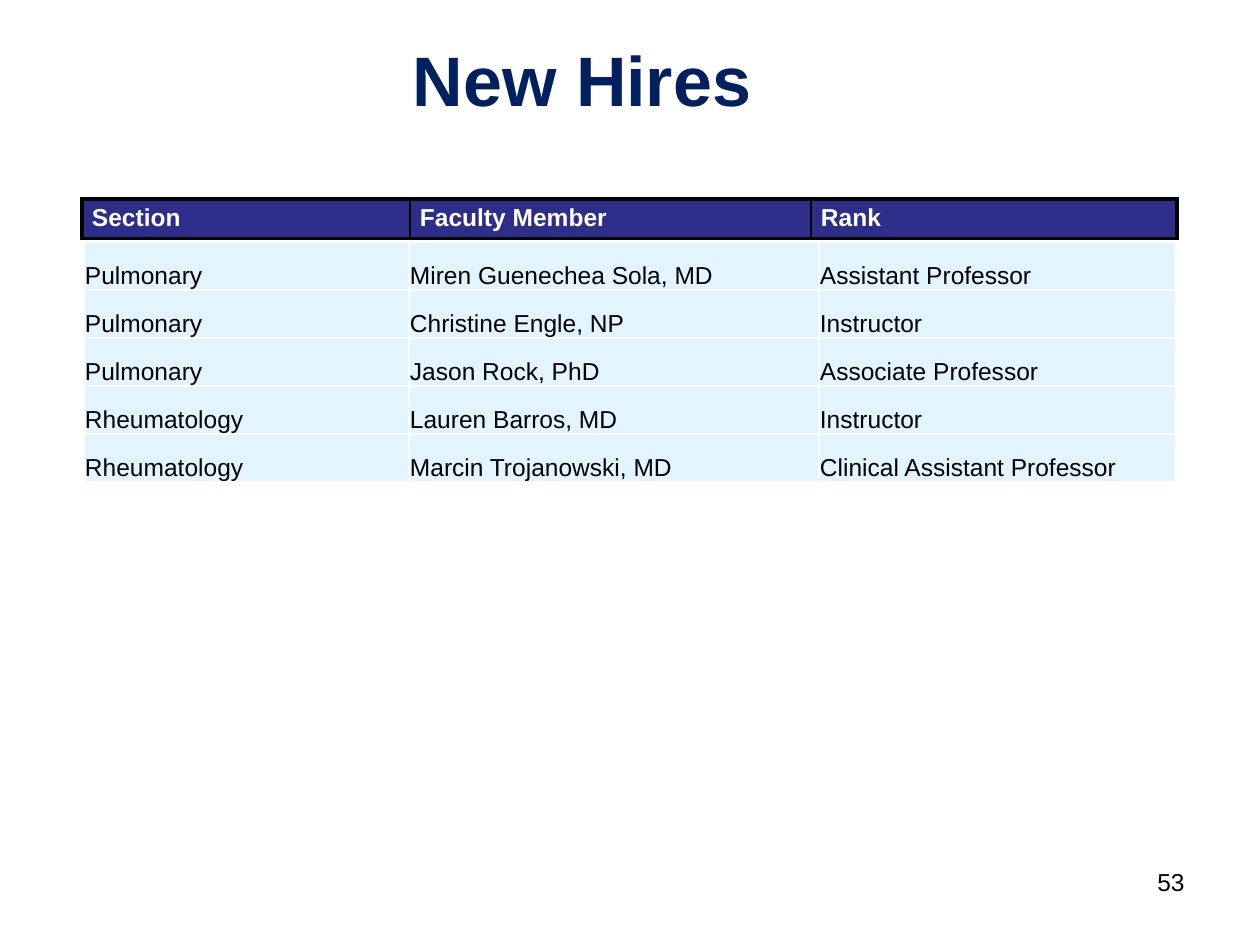
from dataclasses import dataclass
from lxml.etree import SubElement as Sub
from pptx import Presentation as Deck
from pptx.dml.color import RGBColor as Rgb
from pptx.enum.text import MSO_ANCHOR as Anchor, PP_ALIGN as Align
from pptx.oxml.ns import qn
from pptx.util import Emu, Pt

SCALE = 914400 / 126


def px(n):
    return Emu(round(n * SCALE))


@dataclass(frozen=True)
class Theme:
    font: str = "Arial"
    navy: str = "002060"
    head: str = "2D2D8A"
    pale: str = "E1F4FF"
    white: str = "FFFFFF"
    black: str = "000000"
    big: int = 40
    small: int = 14
    thin: float = 1
    thick: float = 2.25


class Page:
    def __init__(self, deck, theme):
        self.theme = theme
        self.slide = deck.slides.add_slide(deck.slide_layouts[6])

    def run(self, frame, text, size, color, bold=False, align=Align.LEFT):
        para = frame.paragraphs[0]
        para.alignment = align
        run = para.add_run()
        run.text = text
        run.font.name = self.theme.font
        run.font.size = Pt(size)
        run.font.bold = bold
        run.font.color.rgb = Rgb.from_string(color)

    def text(self, box, text, size, color, bold=False,
             align=Align.LEFT, anchor=Anchor.TOP):
        frame = self.slide.shapes.add_textbox(*map(px, box)).text_frame
        frame.word_wrap = True
        frame.vertical_anchor = anchor
        self.run(frame, text, size, color, bold, align)

    def edge(self, cell, side, color, width):
        line = Sub(cell._tc.get_or_add_tcPr(), qn("a:ln" + side), w=str(Pt(width)))
        fill = Sub(line, qn("a:solidFill"))
        Sub(fill, qn("a:srgbClr"), val=color)

    def table(self, left, top, cols, high, rows, fill, ink, line,
              outer, pad, anchor=Anchor.TOP, bold=False):
        last = len(cols) - 1
        frame = self.slide.shapes.add_table(
            len(rows), len(cols), px(left), px(top),
            px(sum(cols)), px(high * len(rows)))
        table = frame.table
        table.first_row = table.horz_banding = False
        for col, wide in zip(table.columns, cols):
            col.width = px(wide)
        for r, row in enumerate(rows):
            table.rows[r].height = px(high)
            for c, text in enumerate(row):
                cell = table.cell(r, c)
                (cell.margin_left, cell.margin_top,
                 cell.margin_right, cell.margin_bottom) = map(px, pad)
                cell.vertical_anchor = anchor
                inner = self.theme.thin
                sides = {"L": inner if c else outer,
                         "R": inner if c < last else outer,
                         "T": outer, "B": outer}
                for side, width in sides.items():
                    self.edge(cell, side, line, width)
                cell.fill.solid()
                cell.fill.fore_color.rgb = Rgb.from_string(fill)
                self.run(cell.text_frame, text, self.theme.small, ink, bold)


HEAD = [("Section", "Faculty Member", "Rank")]
HIRES = [
    ("Pulmonary", "Miren Guenechea Sola, MD", "Assistant Professor"),
    ("Pulmonary", "Christine Engle, NP", "Instructor"),
    ("Pulmonary", "Jason Rock, PhD", "Associate Professor"),
    ("Rheumatology", "Lauren Barros, MD", "Instructor"),
    ("Rheumatology", "Marcin Trojanowski, MD", "Clinical Assistant Professor"),
]


def main():
    deck = Deck()
    deck.slide_width, deck.slide_height = px(1260), px(945)
    look = Theme()
    page = Page(deck, look)
    page.text((157, 19, 850, 118), "New Hires", look.big, look.navy,
              bold=True, align=Align.CENTER, anchor=Anchor.MIDDLE)
    page.table(82, 199, (328, 401, 366), 39, HEAD, look.head, look.white,
               look.black, look.thick, (10, 5, 10, 5), bold=True)
    page.table(84, 242, (325, 410, 357), 48, HIRES, look.pale, look.black,
               look.white, look.thin, (1, 1, 1, 0), anchor=Anchor.BOTTOM)
    page.text((903, 861, 294, 66), "53", look.small, look.black,
              align=Align.RIGHT)
    deck.save("out.pptx")


if __name__ == "__main__":
    main()
